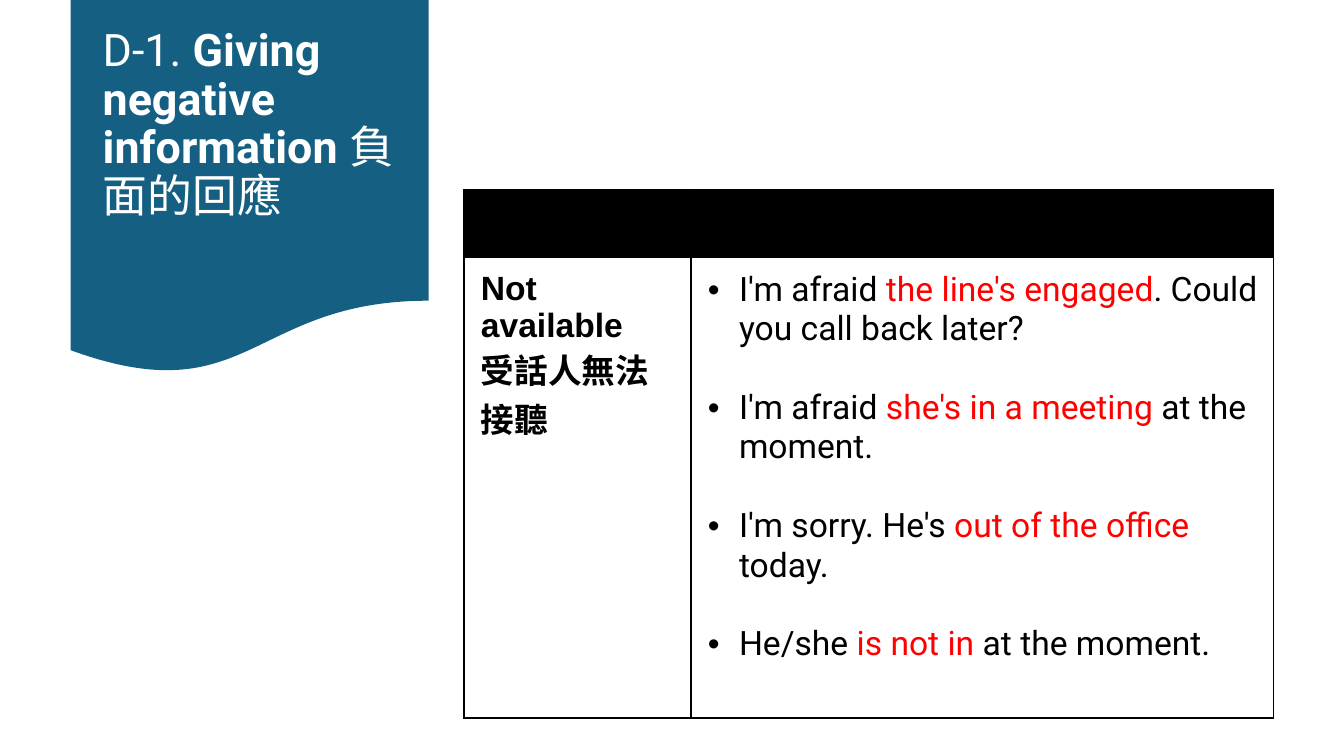
from lxml.etree import SubElement
from pptx import Presentation
from pptx.dml.color import RGBColor
from pptx.enum.shapes import MSO_SHAPE
from pptx.oxml import parse_xml
from pptx.oxml.ns import nsdecls, qn
from pptx.util import Inches, Pt

COLORS = {"banner": "156082", "white": "FFFFFF", "black": "000000", "red": "FF0000"}


def add_run(paragraph, text, size=24, font="Roboto", color="black", bold=False):
    run = paragraph.add_run()
    run.text = text
    run.font.size = Pt(size)
    run.font.name = font
    run.font.bold = bold
    run.font.color.rgb = RGBColor.from_string(COLORS[color])


presentation = Presentation()
presentation.slide_width = Inches(13.33)
presentation.slide_height = Inches(7.5)
slide = presentation.slides.add_slide(presentation.slide_layouts[6])

banner = slide.shapes.add_shape(
    MSO_SHAPE.FLOWCHART_DOCUMENT, Inches(0.7), Inches(0), Inches(3.55), Inches(3.72)
)
banner.shadow.inherit = False
banner.fill.solid()
banner.fill.fore_color.rgb = RGBColor.from_string(COLORS["banner"])
banner.line.fill.background()

title = slide.shapes.add_textbox(Inches(0.92), Inches(0.19), Inches(3.11), Inches(2.59))
title.text_frame.word_wrap = True
title.text_frame.margin_top = Inches(0.09)
heading = title.text_frame.paragraphs[0]
heading.line_spacing = 0.9
for text, bold in [
    ("D-1. ", False),
    ("Giving negative information ", True),
    ("負面的回應", False),
]:
    add_run(heading, text, size=32, color="white", bold=bold)

table_frame = slide.shapes.add_table(
    2, 2, Inches(4.6), Inches(1.88), Inches(8.03), Inches(5.24)
)
table = table_frame.table
for column, width in zip(table.columns, [2.25, 5.78]):
    column.width = Inches(width)
for row, height, fill in zip(table.rows, [0.67, 4.57], ["black", "white"]):
    row.height = Inches(height)
    for cell in row.cells:
        cell.fill.solid()
        cell.fill.fore_color.rgb = RGBColor.from_string(COLORS[fill])
        cell.margin_left = Inches(0.17)
        cell.margin_top = cell.margin_right = cell.margin_bottom = Inches(0.13)
        properties = cell._tc.get_or_add_tcPr()
        for position, side in enumerate("LRTB"):
            properties.insert(position, parse_xml(
                f'<a:ln{side} {nsdecls("a")} w="{Pt(1.5)}"><a:solidFill>'
                f'<a:srgbClr val="{COLORS["black"]}"/></a:solidFill></a:ln{side}>'
            ))

label = table.cell(1, 0).text_frame
add_run(label.paragraphs[0], "Not available", font="Arial", bold=True)
add_run(label.add_paragraph(), "受話人無法接聽", font="Arial", bold=True)

replies = [
    ("I'm afraid ", "the line's engaged", ". Could you call back later?"),
    ("I'm afraid ", "she's in a meeting ", "at the moment."),
    ("I'm sorry. He's ", "out of the office ", "today."),
    ("He/she ", "is not in ", "at the moment."),
]
reply_frame = table.cell(1, 1).text_frame
for index, reply in enumerate(replies):
    paragraph = reply_frame.add_paragraph() if index else reply_frame.paragraphs[0]
    if index < len(replies) - 1:
        paragraph.space_after = Pt(28)
    properties = paragraph._p.get_or_add_pPr()
    properties.set("marL", str(Inches(0.31)))
    properties.set("indent", str(Inches(-0.31)))
    SubElement(properties, qn("a:buFont")).set("typeface", "Arial")
    SubElement(properties, qn("a:buChar")).set("char", "•")
    for text, color in zip(reply, ["black", "red", "black"]):
        add_run(paragraph, text, color=color)

presentation.save("out.pptx")
